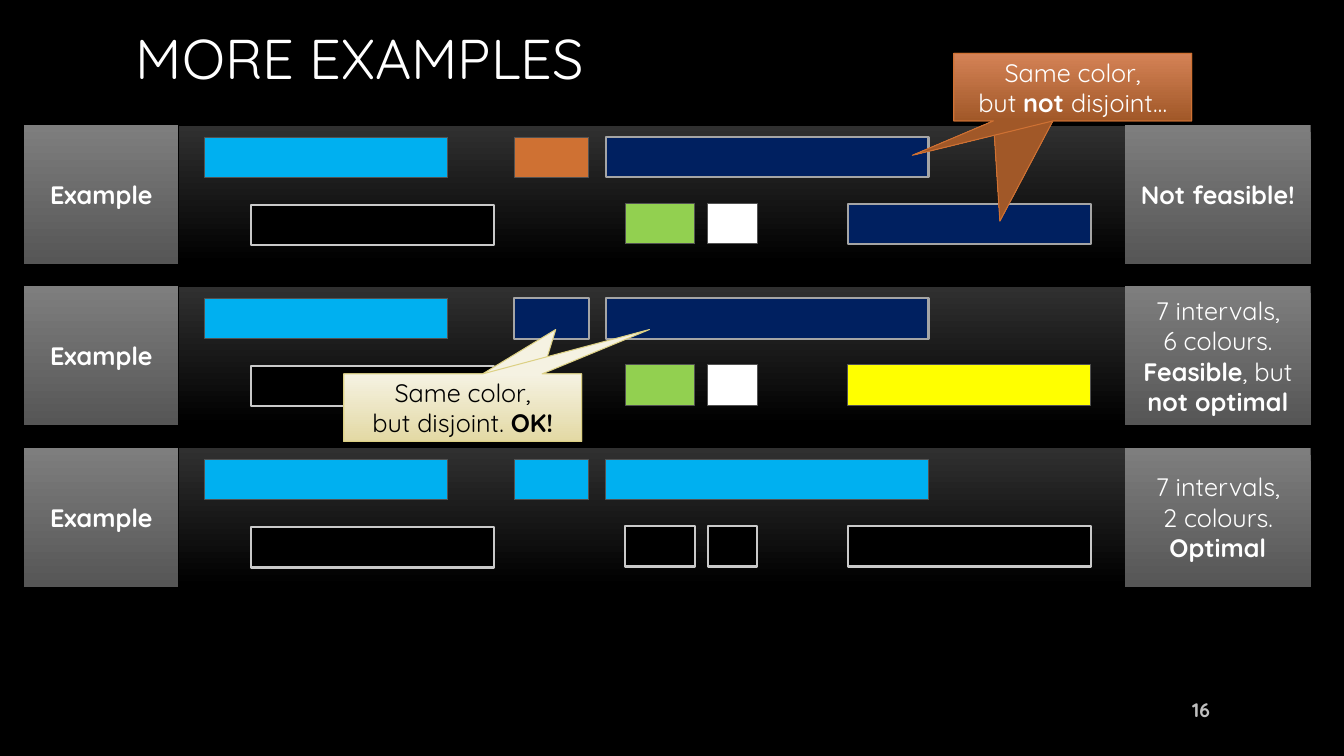
import pptx
import pptx.util
import pptx.dml.color
import pptx.enum.shapes
import pptx.enum.text

Inches = pptx.util.Inches
Pt = pptx.util.Pt
RGB = pptx.dml.color.RGBColor
SHAPE = pptx.enum.shapes.MSO_SHAPE
ALIGN = pptx.enum.text.PP_ALIGN
MIDDLE = pptx.enum.text.MSO_ANCHOR.MIDDLE

FONT = "Quicksand"
BLACK, WHITE = RGB(0, 0, 0), RGB(0xFF, 0xFF, 0xFF)
SKY, NAVY = RGB(0x00, 0xB0, 0xF0), RGB(0x00, 0x20, 0x60)
GREEN, YELLOW = RGB(0x92, 0xD0, 0x50), RGB(0xFF, 0xFF, 0x00)
ORANGE, CREAM = RGB(0xCF, 0x71, 0x33), RGB(0xDC, 0xD0, 0x84)
NUMBER_GREY = RGB(0xBF, 0xBF, 0xBF)
OUTLINES = {NAVY: (RGB(0xA5, 0xA5, 0xA5), 1.5), BLACK: (RGB(0xC9, 0xC9, 0xC9), 1.5)}
THIN_OUTLINE = (RGB(0x52, 0x52, 0x52), 0.75)
PANEL_FADE = (RGB(0x30, 0x30, 0x30), BLACK)
LABEL_FADE = (RGB(0x7E, 0x7E, 0x7E), RGB(0x56, 0x56, 0x56))
ORANGE_FADE = (RGB(0xD4, 0x82, 0x56), RGB(0xA1, 0x58, 0x28))
CREAM_FADE = (RGB(0xF5, 0xF2, 0xE2), RGB(0xE3, 0xD9, 0xA4))

INTERVALS = [
    (2.03, 0.12, 2.41),
    (6.01, 0.12, 3.2),
    (6.2, 0.78, 0.69),
    (7.02, 0.78, 0.49),
    (8.41, 0.78, 2.41),
    (2.49, 0.79, 2.41),
    (5.1, 0.12, 0.74),
]
ROWS = [
    ((SKY, NAVY, GREEN, WHITE, NAVY, BLACK, ORANGE),
     [[("Not feasible!", True)]]),
    ((SKY, NAVY, GREEN, WHITE, YELLOW, BLACK, NAVY),
     [[("7 intervals,\n6 colours.", False)],
      [("Feasible", True), (", but\n", False), ("not optimal", True)]]),
    ((SKY, SKY, BLACK, BLACK, BLACK, BLACK, SKY),
     [[("7 intervals,\n2 colours.", False)], [("Optimal", True)]]),
]
NOT_DISJOINT = [[("Same color,\nbut ", False), ("not ", True), ("disjoint…", False)]]
DISJOINT = [[("Same color,\nbut disjoint. ", False), ("OK!", True)]]
CALLOUTS = [
    (9.46, 0.53, (-0.306, 1.984), ORANGE_FADE, ORANGE, WHITE, []),
    (9.46, 0.53, (-0.674, 1.009), ORANGE_FADE, ORANGE, WHITE, NOT_DISJOINT),
    (3.41, 3.71, (0.391, -1.158), CREAM_FADE, CREAM, BLACK, []),
    (3.41, 3.71, (0.785, -1.158), CREAM_FADE, CREAM, BLACK, DISJOINT),
]
ROW_TOP, ROW_STEP, ROW_HEIGHT, BAR_HEIGHT = 1.24, 1.6, 1.38, 0.4


def write(sp, paragraphs, color, size=18, align=ALIGN.CENTER):
    tf = sp.text_frame
    tf.word_wrap = True
    tf.vertical_anchor = MIDDLE
    for i, runs in enumerate(paragraphs):
        p = tf.add_paragraph() if i else tf.paragraphs[0]
        p.alignment = align
        for text, bold in runs:
            for j, piece in enumerate(text.split("\n")):
                if j:
                    p.add_line_break()
                if piece:
                    r = p.add_run()
                    r.text = piece
                    r.font.name = FONT
                    r.font.size = Pt(size)
                    r.font.bold = bold
                    r.font.color.rgb = color


def add_box(s, kind, box, fill, line=None, width=0.75):
    sp = s.shapes.add_shape(kind, *map(Inches, box))
    sp.shadow.inherit = False
    if isinstance(fill, RGB):
        sp.fill.solid()
        sp.fill.fore_color.rgb = fill
    else:
        sp.fill.gradient()
        sp.fill.gradient_angle = 270
        for stop, color in zip(sp.fill.gradient_stops, fill):
            stop.color.rgb = color
    if line is None:
        sp.line.fill.background()
    else:
        sp.line.color.rgb = line
        sp.line.width = Pt(width)
    return sp


def add_text(s, box, text, color, size, bold, align):
    sp = s.shapes.add_textbox(*map(Inches, box))
    write(sp, [[(text, bold)]], color, size, align)


def add_row(s, top, colors, verdict):
    add_box(s, SHAPE.RECTANGLE, (1.77, top, 9.4, ROW_HEIGHT), PANEL_FADE, BLACK)
    for (left, offset, width), color in zip(INTERVALS, colors):
        add_box(s, SHAPE.FLOWCHART_PROCESS, (left, top + offset, width, BAR_HEIGHT),
                color, *OUTLINES.get(color, THIN_OUTLINE))
    for left, width, text in ((0.24, 1.53, [[("Example", True)]]),
                              (11.16, 1.84, verdict)):
        sp = add_box(s, SHAPE.RECTANGLE, (left, top, width, ROW_HEIGHT), LABEL_FADE)
        write(sp, text, WHITE)


def main():
    prs = pptx.Presentation()
    prs.slide_width, prs.slide_height = Inches(13.33), Inches(7.5)
    s = prs.slides.add_slide(prs.slide_layouts[6])
    s.background.fill.solid()
    s.background.fill.fore_color.rgb = BLACK

    add_text(s, (1.25, 0.01, 10.83, 1.12), "MORE EXAMPLES", WHITE, 40, False, ALIGN.LEFT)
    for i, (colors, verdict) in enumerate(ROWS):
        add_row(s, ROW_TOP + i * ROW_STEP, colors, verdict)
    for left, top, tip, fade, line, color, text in CALLOUTS:
        sp = add_box(s, SHAPE.RECTANGULAR_CALLOUT, (left, top, 2.36, 0.67), fade, line)
        sp.adjustments[0], sp.adjustments[1] = tip
        write(sp, text, color)
    add_text(s, (11.5, 6.84, 0.6, 0.4), "16", NUMBER_GREY, 14, True, ALIGN.RIGHT)
    prs.save("out.pptx")


if __name__ == "__main__":
    main()
